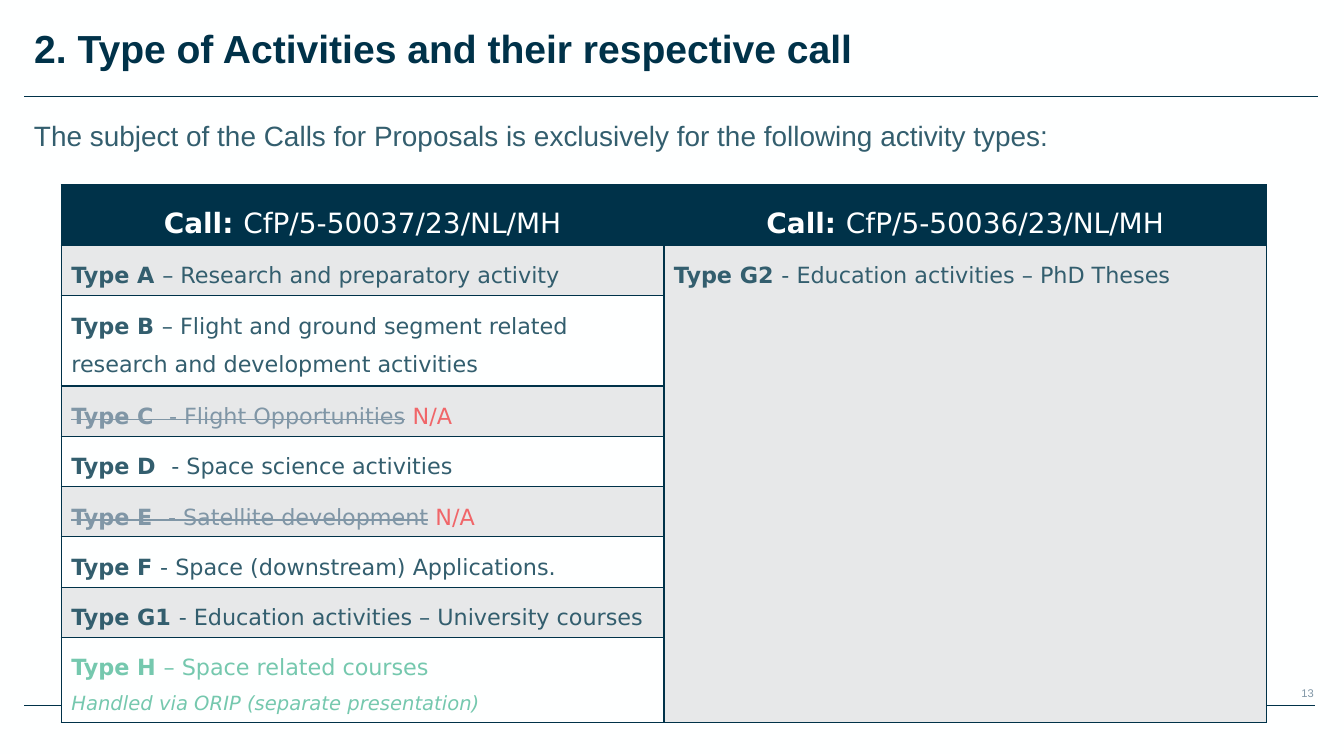
from dataclasses import dataclass

from lxml.etree import SubElement
from pptx import Presentation
from pptx.dml.color import RGBColor
from pptx.enum.text import MSO_ANCHOR, PP_ALIGN
from pptx.oxml.ns import qn
from pptx.util import Inches, Pt

NAVY = RGBColor(0x00, 0x32, 0x49)
TEAL = RGBColor(0x33, 0x5E, 0x6E)
SLATE = RGBColor(0x80, 0x96, 0xA6)
CORAL = RGBColor(0xF0, 0x66, 0x69)
MINT = RGBColor(0x75, 0xC8, 0xAE)
GREY = RGBColor(0xE7, 0xE8, 0xE9)
WHITE = RGBColor(0xFE, 0xFF, 0xFF)
BODY_FONT = "Arial"
TABLE_FONT = "DejaVu Sans"


@dataclass
class Activity:
    label: str
    description: str
    color: RGBColor = TEAL
    available: bool = True
    remark: str = ""


CALLS = ["CfP/5-50037/23/NL/MH", "CfP/5-50036/23/NL/MH"]
ACTIVITIES = [
    Activity("Type A ", "– Research and preparatory activity"),
    Activity("Type B ", "– Flight and ground segment related research and development activities"),
    Activity("Type C  ", "- Flight Opportunities", SLATE, available=False),
    Activity("Type D  ", "- Space science activities"),
    Activity("Type E  ", "- Satellite development", SLATE, available=False),
    Activity("Type F ", "- Space (downstream) Applications."),
    Activity("Type G1 ", "- Education activities – University courses"),
    Activity("Type H ", "– Space related courses", MINT,
             remark="Handled via ORIP (separate presentation)"),
]
PHD_THESES = Activity("Type G2 ", "- Education activities – PhD Theses")


def add_run(paragraph, text: str, size: float, color: RGBColor, font: str = TABLE_FONT,
            bold: bool = False, italic: bool = False, strike: bool = False) -> None:
    run = paragraph.add_run()
    run.text = text
    run.font.name = font
    run.font.size = Pt(size)
    run.font.bold = bold
    run.font.italic = italic
    run.font.color.rgb = color
    if strike:
        run._r.get_or_add_rPr().set("strike", "sngStrike")


def add_rule(slide, y: float, right: float) -> None:
    rule = slide.shapes.add_connector(1, Inches(0.24), Inches(y), Inches(right), Inches(y))
    rule.line.color.rgb = NAVY
    rule.line.width = Pt(0.75)
    SubElement(rule._element.spPr, qn("a:effectLst"))


def add_text(slide, left: float, top: float, width: float, height: float,
             text: str, size: float, color: RGBColor):
    box = slide.shapes.add_textbox(Inches(left), Inches(top), Inches(width), Inches(height))
    box.text_frame.word_wrap = True
    add_run(box.text_frame.paragraphs[0], text, size, color, BODY_FONT)
    return box.text_frame


def style_cell(cell, fill: RGBColor) -> None:
    properties = cell._tc.get_or_add_tcPr()
    for side in ("lnL", "lnR", "lnT", "lnB"):
        border = SubElement(properties, qn(f"a:{side}"), w=str(Pt(1)))
        solid = SubElement(border, qn("a:solidFill"))
        SubElement(solid, qn("a:srgbClr"), val=str(NAVY))
    cell.fill.solid()
    cell.fill.fore_color.rgb = fill


def write_activity(cell, activity: Activity) -> None:
    struck = not activity.available
    paragraph = cell.text_frame.paragraphs[0]
    paragraph.line_spacing = 1.5
    add_run(paragraph, activity.label, 16, activity.color, bold=True, strike=struck)
    add_run(paragraph, activity.description, 16, activity.color, strike=struck)
    if struck:
        add_run(paragraph, " N/A", 16, CORAL)
    if activity.remark:
        remark = cell.text_frame.add_paragraph()
        remark.line_spacing = 1.5
        add_run(remark, activity.remark, 14, activity.color, italic=True)


def add_calls_table(slide) -> None:
    row_count = len(ACTIVITIES) + 1
    table = slide.shapes.add_table(row_count, len(CALLS), Inches(0.61), Inches(1.84),
                                   Inches(11.99), Inches(4.9)).table
    for row in table.rows:
        row.height = Inches(0.41)
    for column, call in enumerate(CALLS):
        header = table.cell(0, column)
        style_cell(header, NAVY)
        header.vertical_anchor = MSO_ANCHOR.MIDDLE
        paragraph = header.text_frame.paragraphs[0]
        paragraph.alignment = PP_ALIGN.CENTER
        paragraph.line_spacing = 1.5
        add_run(paragraph, "Call: ", 20, WHITE, bold=True)
        add_run(paragraph, call, 20, WHITE)
    for row, activity in enumerate(ACTIVITIES, start=1):
        style_cell(table.cell(row, 0), GREY if row % 2 else WHITE)
        style_cell(table.cell(row, 1), GREY)
        write_activity(table.cell(row, 0), activity)
    theses = table.cell(1, 1)
    theses.merge(table.cell(row_count - 1, 1))
    write_activity(theses, PHD_THESES)


def main() -> None:
    presentation = Presentation()
    presentation.slide_width = Inches(13.37)
    presentation.slide_height = Inches(7.5)
    slide = presentation.slides.add_slide(presentation.slide_layouts[5])
    slide.background.fill.solid()
    slide.background.fill.fore_color.rgb = WHITE

    page_number = add_text(slide, 8.97, 6.78, 4.1, 0.24, "13", 8, SLATE)
    page_number.margin_right = 0
    page_number.paragraphs[0].alignment = PP_ALIGN.RIGHT
    add_rule(slide, 7.02, 13.08)
    add_rule(slide, 0.96, 13.11)

    title = slide.shapes.title
    title.left, title.top = Inches(0.24), Inches(0.19)
    title.width, title.height = Inches(11.06), Inches(0.57)
    title.text_frame.vertical_anchor = MSO_ANCHOR.MIDDLE
    heading = title.text_frame.paragraphs[0]
    heading.alignment = PP_ALIGN.LEFT
    add_run(heading, "2. Type of Activities and their respective call", 28, NAVY,
            BODY_FONT, bold=True)

    add_calls_table(slide)
    add_text(slide, 0.24, 1.13, 12.63, 0.44,
             "The subject of the Calls for Proposals is exclusively for the following activity types:",
             20, TEAL)
    presentation.save("out.pptx")


if __name__ == "__main__":
    main()
